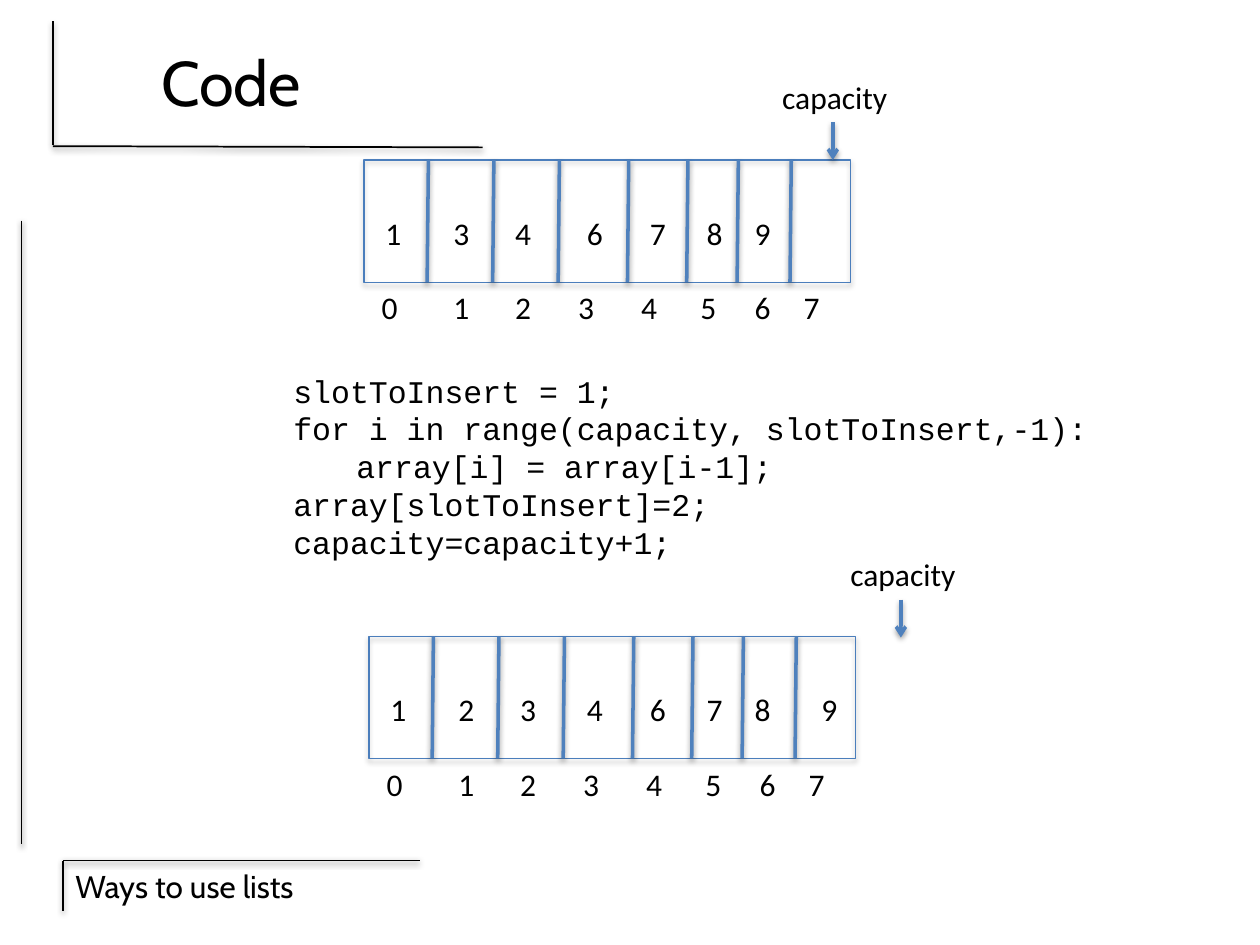
from dataclasses import dataclass
from lxml.etree import SubElement
from pptx import Presentation
from pptx.dml.color import RGBColor as RGB
from pptx.enum.shapes import MSO_CONNECTOR as Link, MSO_SHAPE as Kind
from pptx.enum.text import MSO_ANCHOR as Anchor, MSO_AUTO_SIZE as Fit, PP_ALIGN as Align
from pptx.oxml.ns import qn
from pptx.util import Inches, Pt


@dataclass(frozen=True)
class Theme:
    ink: RGB = RGB(0, 0, 0)
    blue: RGB = RGB(0x4F, 0x81, 0xBD)
    edge: RGB = RGB(0x4B, 0x7E, 0xBC)
    head: str = "Cabin"
    body: str = "Calibri"
    mono: str = "Courier New"
    big: int = 36
    size: int = 18
    thin: float = 0.75
    rule: float = 1
    bar: float = 2


T = Theme()

# Offsets from the left edge of an array box
BARS = (0.51, 1.03, 1.55, 2.1, 2.57, 2.97, 3.39)
MARKS = (0.04, 0.61, 1.1, 1.6, 2.1, 2.57, 3, 3.39)
CELLS = (0.07, 0.61, 1.1, 1.67, 2.17, 2.62, 3, 3.53)

CODE = """slotToInsert = 1;
for i in range(capacity, slotToInsert,-1):
array[i] = array[i-1];
array[slotToInsert]=2;
capacity=capacity+1;"""


def shade(shape, dist=1.57, alpha=38):
    """Give the shape a soft shadow that falls straight down."""
    fx = SubElement(shape._element.spPr, qn("a:effectLst"))
    drop = SubElement(fx, qn("a:outerShdw"), blurRad=str(Pt(3.15)),
                      dist=str(Pt(dist)), dir="5400000", rotWithShape="0")
    tint = SubElement(drop, qn("a:srgbClr"), val=str(T.ink))
    SubElement(tint, qn("a:alpha"), val=str(alpha * 1000))


def line(slide, x1, y1, x2, y2, color=T.ink, width=T.rule, arrow=False):
    link = slide.shapes.add_connector(
        Link.STRAIGHT, Inches(x1), Inches(y1), Inches(x2), Inches(y2))
    link.line.color.rgb = color
    link.line.width = Pt(width)
    if arrow:
        SubElement(link.line._get_or_add_ln(), qn("a:tailEnd"), type="arrow")
    shade(link)


def label(slide, text, x, y, w, h=0.4, font=T.body, size=T.size, wrap=False):
    box = slide.shapes.add_textbox(Inches(x), Inches(y), Inches(w), Inches(h))
    frame = box.text_frame
    frame.text = text
    frame.word_wrap = wrap
    frame.auto_size = Fit.SHAPE_TO_FIT_TEXT
    for para in frame.paragraphs:
        for run in para.runs:
            run.font.name = font
            run.font.size = Pt(size)
            run.font.color.rgb = T.ink
    return frame


def title(slide, x, y, w, h):
    """Heading with its corner rule."""
    left, base = x - 0.08, y + 1
    line(slide, left + 3.41, base, left, base - 0.01)
    line(slide, left, y, left, base - 0.02)
    frame = label(slide, "Code", x, y, w, h, T.head, T.big, True)
    frame.auto_size = Fit.NONE
    frame.vertical_anchor = Anchor.MIDDLE
    frame.paragraphs[0].alignment = Align.CENTER


def footer(slide, x, y, w, h):
    """Lecture name with its corner rule."""
    line(slide, x + 2.83, y, x, y)
    line(slide, x, y, x, y + h)
    label(slide, "Ways to use lists", x, y, w, h, T.head, wrap=True)


def array(slide, x, y, w, h, values, shift=0):
    """Array box with dividers, values and indexes; shift moves slots 3 on."""
    box = slide.shapes.add_shape(
        Kind.RECTANGLE, Inches(x), Inches(y), Inches(w), Inches(h))
    box.fill.background()
    box.line.color.rgb = T.edge
    box.line.width = Pt(T.thin)
    shade(box, 1.81, 35)
    for dx in BARS:
        line(slide, x + dx, y, x + dx - 0.01, y + h, T.blue, T.bar)
    for i, dx in enumerate(MARKS):
        label(slide, str(i), x + dx, y + h, 0.33)
    for i, (value, dx) in enumerate(zip(values, CELLS)):
        move = shift if i > 2 else 0
        label(slide, value, x + dx + move, y + 0.38, 0.33)


def pointer(slide, x, y, w, h):
    """Capacity label above a down arrow."""
    label(slide, "capacity", x, y, w)
    line(slide, x + 0.5, y + 0.4, x + 0.5, y + h, T.blue, T.bar, True)


def code(slide, x, y, w, h):
    """Insertion loop, with its body indented."""
    frame = label(slide, CODE, x, y, w, h, T.mono)
    body = frame.paragraphs[2]._p.get_or_add_pPr()
    body.set("marL", str(Inches(0.5)))


def main():
    deck = Presentation()
    deck.slide_width, deck.slide_height = Inches(10), Inches(7.5)
    slide = deck.slides.add_slide(deck.slide_layouts[6])

    # Frame of the page
    footer(slide, 0.5, 6.83, 2.42, 0.4)
    line(slide, 0.17, 1.75, 0.17, 6.7)
    title(slide, 0.5, 0.17, 2.67, 0.95)

    # Before, code, after
    array(slide, 2.89, 1.27, 3.86, 0.97, "1346789")
    pointer(slide, 6.11, 0.57, 1.04, 0.7)
    code(slide, 2.23, 2.9, 6.56, 1.62)
    array(slide, 2.93, 5.05, 3.86, 0.97, "12346789", -0.04)
    pointer(slide, 6.65, 4.36, 1.04, 0.7)

    deck.save("out.pptx")


if __name__ == "__main__":
    main()
